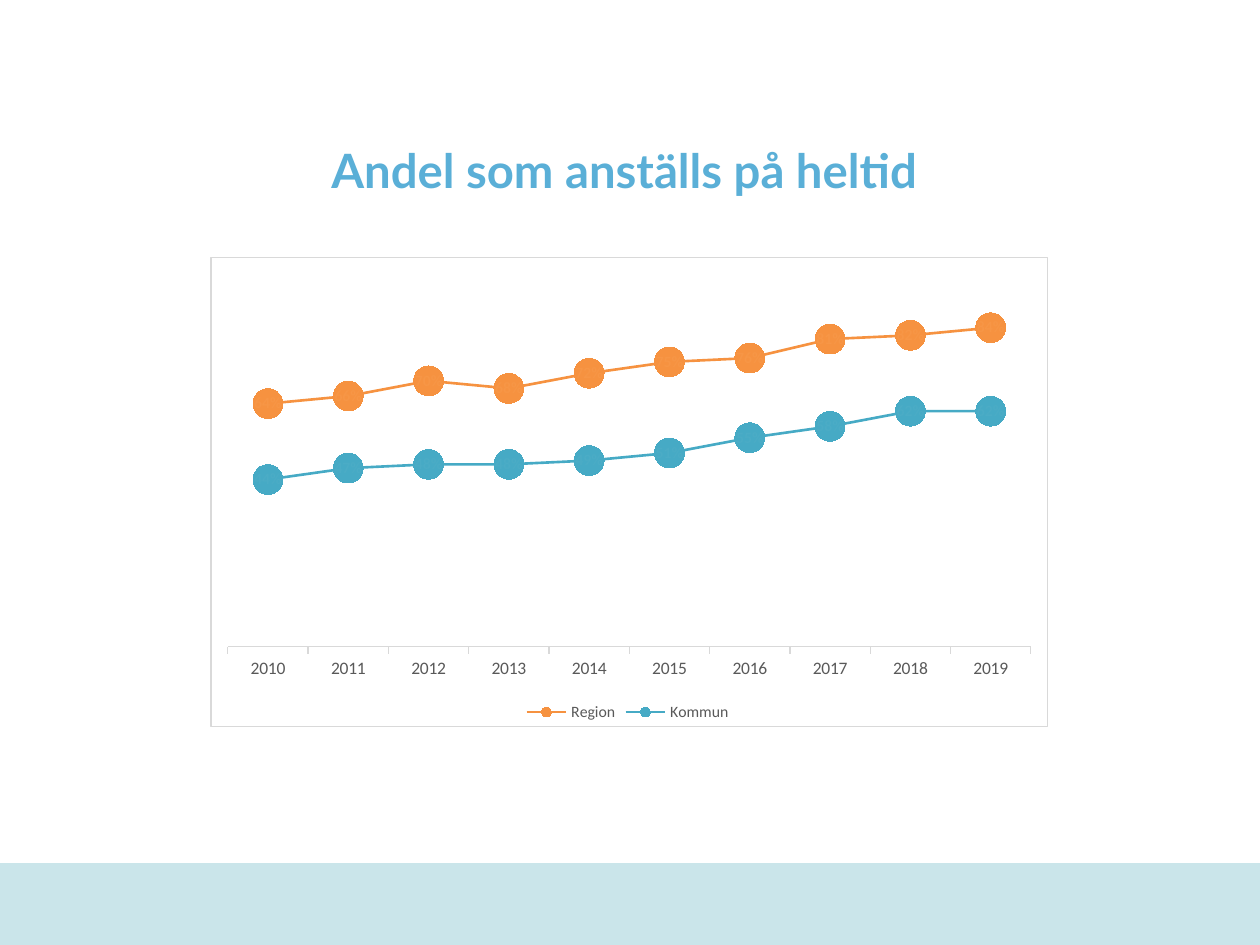
from dataclasses import dataclass

from pptx import Presentation
from pptx.chart.data import CategoryChartData as ChartData
from pptx.dml.color import RGBColor as Color
from pptx.enum.chart import XL_CHART_TYPE as Kind, XL_LABEL_POSITION as Spot
from pptx.enum.chart import XL_LEGEND_POSITION as Side, XL_MARKER_STYLE as Mark
from pptx.enum.chart import XL_TICK_LABEL_POSITION as TickPos, XL_TICK_MARK as Tick
from pptx.enum.shapes import MSO_SHAPE as Shape
from pptx.enum.text import MSO_ANCHOR as Anchor, PP_ALIGN as Align
from pptx.oxml import parse_xml
from pptx.oxml.ns import nsdecls, qn
from pptx.util import Inches, Pt


@dataclass(frozen=True)
class Theme:
    """Colours, fonts and sizes of the slide."""
    head: str = "5AAFD7"
    band: str = "CAE5EA"
    paper: str = "FFFFFF"
    rule: str = "D9D9D9"
    ink: str = "595959"
    head_font: str = "Lato"
    font: str = "Calibri"
    head_size: float = 27
    axis_size: float = 10
    note_size: float = 9
    line: float = 1.5
    thin: float = 0.75
    dot: int = 17


THEME = Theme()
YEARS = [str(year) for year in range(2010, 2020)]
SERIES = [
    ("Region", "F69240", "F79646",
     (0.64, 0.66, 0.7, 0.68, 0.72, 0.75, 0.76, 0.81, 0.82, 0.84)),
    ("Kommun ", "46AAC5", "4BACC6",
     (0.44, 0.47, 0.48, 0.48, 0.49, 0.51, 0.55, 0.58, 0.62, 0.62)),
]


def style(font, size, color, name=THEME.font, bold=False):
    """Set the look of a font."""
    font.size, font.name, font.bold = Pt(size), name, bold
    font.color.rgb = Color.from_string(color)


def paint(fill, color):
    """Give a fill one solid colour."""
    fill.solid()
    fill.fore_color.rgb = Color.from_string(color)


def stroke(line, color, width):
    """Set the colour and width of a line."""
    paint(line.fill, color)
    line.width = Pt(width)


def add_text(slide, text, box, align=Align.CENTER, anchor=Anchor.MIDDLE, **look):
    """Add a wrapped text box with one formatted run."""
    frame = slide.shapes.add_textbox(*map(Inches, box)).text_frame
    frame.word_wrap = True
    frame.vertical_anchor = anchor
    para = frame.paragraphs[0]
    para.alignment = align
    run = para.add_run()
    run.text = text
    style(run.font, **look)


def add_band(slide, box, color):
    """Add a plain coloured rectangle."""
    band = slide.shapes.add_shape(Shape.RECTANGLE, *map(Inches, box))
    band.shadow.inherit = False
    paint(band.fill, color)
    band.line.fill.background()


def frame_chart(chart, fill, edge, width):
    """Fill and outline the chart area."""
    chart.element.find(qn("c:chart")).addnext(parse_xml(
        f'<c:spPr {nsdecls("c", "a")}>'
        f'<a:solidFill><a:srgbClr val="{fill}"/></a:solidFill>'
        f'<a:ln w="{Pt(width)}"><a:solidFill><a:srgbClr val="{edge}"/>'
        '</a:solidFill></a:ln></c:spPr>'))


def place_plot(chart, **parts):
    """Fix the inner plot area as shares of the chart."""
    plot = chart.element.find(qn("c:chart")).find(qn("c:plotArea"))
    for old in plot.findall(qn("c:layout")):
        plot.remove(old)
    sizes = "".join(f'<c:{key} val="{val}"/>' for key, val in parts.items())
    plot.insert(0, parse_xml(
        f'<c:layout {nsdecls("c")}><c:manualLayout>'
        '<c:layoutTarget val="inner"/><c:xMode val="edge"/><c:yMode val="edge"/>'
        f'{sizes}</c:manualLayout></c:layout>'))


def style_line(line, color, ink):
    """Set the line, markers and labels of one series."""
    line.smooth = False
    stroke(line.format.line, color, THEME.line)
    mark = line.marker
    mark.style, mark.size = Mark.CIRCLE, THEME.dot
    paint(mark.format.fill, THEME.paper)
    stroke(mark.format.line, color, THEME.line)
    tags = line.data_labels
    tags.show_value = True
    tags.position = Spot.CENTER
    style(tags.font, THEME.note_size, ink, bold=True)


def style_axes(chart):
    """Show the years and hide the share axis."""
    years, share = chart.category_axis, chart.value_axis
    years.major_tick_mark = Tick.OUTSIDE
    years.tick_label_position = TickPos.LOW
    years.has_major_gridlines = False
    stroke(years.format.line, THEME.rule, THEME.thin)
    style(years.tick_labels.font, THEME.axis_size, THEME.ink)
    share.minimum_scale, share.maximum_scale = 0, 1
    share.has_major_gridlines = False
    share.visible = False


def add_lines(slide, box):
    """Add the line chart of full-time shares."""
    data = ChartData(number_format="0%")
    data.categories = YEARS
    for name, _, _, vals in SERIES:
        data.add_series(name, vals)
    chart = slide.shapes.add_chart(
        Kind.LINE_MARKERS, *map(Inches, box), data).chart
    style(chart.font, THEME.axis_size, "000000")
    chart.has_title = False
    chart.has_legend = True
    chart.legend.position = Side.BOTTOM
    chart.legend.include_in_layout = False
    style(chart.legend.font, THEME.note_size, THEME.ink)
    plot = chart.plots[0]
    plot.vary_by_categories = False
    for line, (_, color, ink, _) in zip(plot.series, SERIES):
        style_line(line, color, ink)
    style_axes(chart)
    frame_chart(chart, THEME.paper, THEME.rule, THEME.thin)
    place_plot(chart, x=0.02, y=0.02, w=0.96, h=0.81)


def main():
    """Build and save the slide."""
    deck = Presentation()
    deck.slide_width, deck.slide_height = Inches(10), Inches(7.5)
    slide = deck.slides.add_slide(deck.slide_layouts[6])
    paint(slide.background.fill, THEME.paper)
    add_text(slide, "Andel som anställs på heltid ", (0.5, 0.72, 9, 1.25),
             size=THEME.head_size, color=THEME.head, name=THEME.head_font,
             bold=True)
    add_band(slide, (0, 6.85, 10, 0.65), THEME.band)
    add_lines(slide, (1.67, 2.04, 6.65, 3.73))
    deck.save("out.pptx")


if __name__ == "__main__":
    main()
